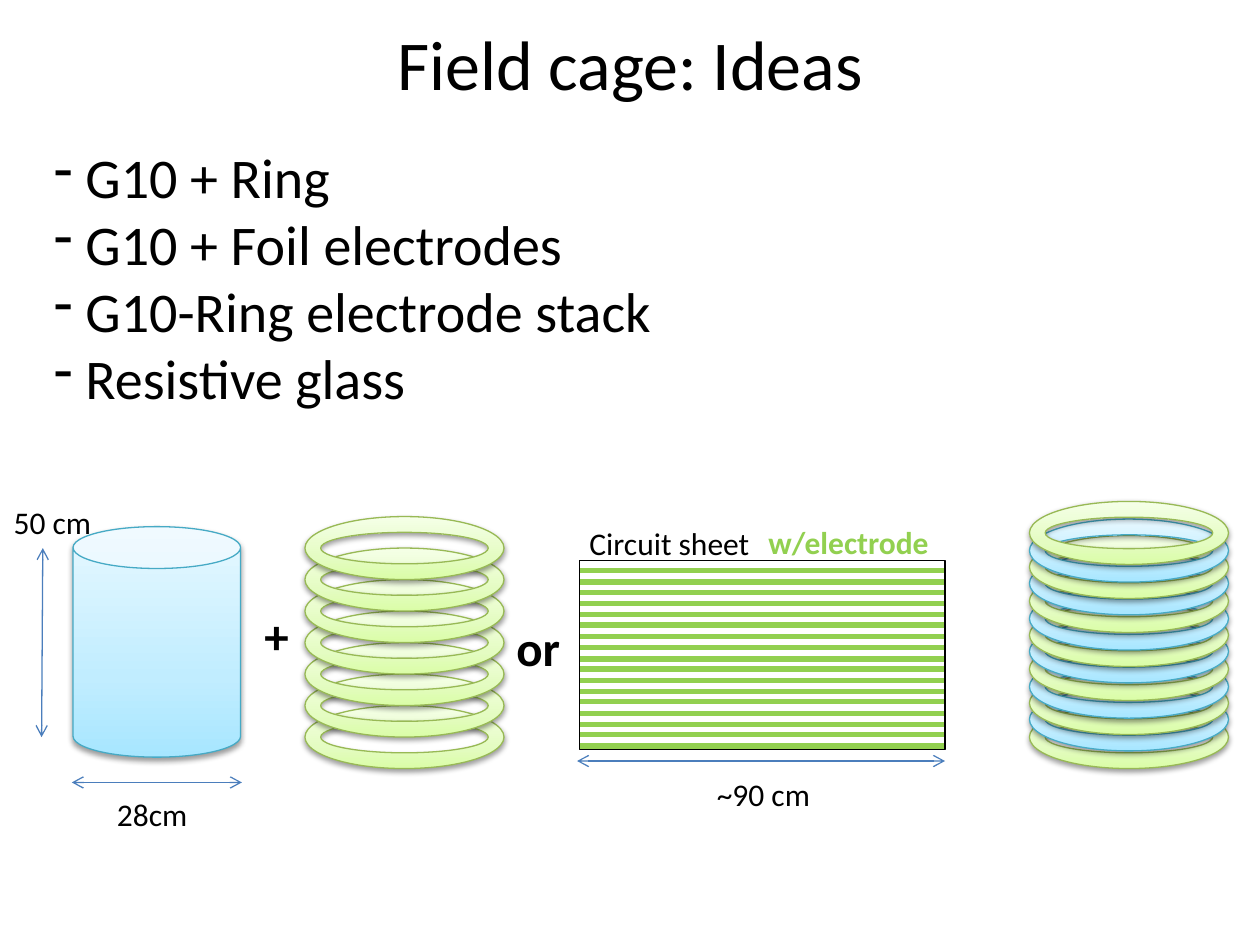
import pptx
import pptx.util
from lxml import etree
from pptx.dml.color import RGBColor
from pptx.enum.shapes import MSO_CONNECTOR, MSO_SHAPE
from pptx.enum.text import MSO_ANCHOR, MSO_AUTO_SIZE, PP_ALIGN
from pptx.oxml import parse_xml
from pptx.oxml.ns import nsdecls, qn

PX = 9144  # 100 px to the inch
BLACK = RGBColor(0x00, 0x00, 0x00)
ELECTRODE = RGBColor(0x92, 0xD0, 0x50)
ARROW = RGBColor(0x4B, 0x7E, 0xBC)
# Outline, then the gradient colours from bottom to top
GREEN = [RGBColor.from_string(c) for c in ("98B955", "DAFDA7", "E4FCC2", "F5FFE7")]
BLUE = [RGBColor.from_string(c) for c in ("46AAC5", "A7E6FF", "C1EDFF", "E7F8FF")]

deck = pptx.Presentation()
deck.slide_width, deck.slide_height = 1000 * PX, 750 * PX
slide = deck.slides.add_slide(deck.slide_layouts[6])


def add_solid(preset, left, top, width, height, palette):
    """Add a shape with a vertical three-stop gradient and a soft shadow."""
    solid = slide.shapes.add_shape(preset, left * PX, top * PX, width * PX, height * PX)
    outline, *colours = palette
    solid.line.color.rgb = outline
    solid.line.width = pptx.util.Pt(0.75)
    stops = "".join(
        f'<a:gs pos="{pos}"><a:srgbClr val="{colour}"/></a:gs>'
        for pos, colour in zip((0, 35000, 100000), colours))
    line = solid.line._get_or_add_ln()
    line.addprevious(parse_xml(
        f'<a:gradFill {nsdecls("a")} rotWithShape="1"><a:gsLst>{stops}</a:gsLst>'
        '<a:lin ang="16200000" scaled="0"/></a:gradFill>'))
    line.addnext(parse_xml(
        f'<a:effectLst {nsdecls("a")}><a:outerShdw blurRad="40000" dist="20000" '
        'dir="5400000" rotWithShape="0"><a:srgbClr val="000000">'
        '<a:alpha val="38000"/></a:srgbClr></a:outerShdw></a:effectLst>'))


def add_line(x1, y1, x2, y2, colour, weight, arrows=False):
    line = slide.shapes.add_connector(
        MSO_CONNECTOR.STRAIGHT, x1 * PX, y1 * PX, x2 * PX, y2 * PX)
    line.line.color.rgb = colour
    line.line.width = pptx.util.Pt(weight)
    etree.SubElement(line._element.spPr, qn("a:effectLst"))
    if arrows:
        for end in ("a:headEnd", "a:tailEnd"):
            etree.SubElement(line.line._get_or_add_ln(), qn(end), type="arrow")


# Title
title = slide.shapes.add_textbox(0, 0, 1000 * PX, 100 * PX).text_frame
title.word_wrap = True
title.vertical_anchor = MSO_ANCHOR.MIDDLE
heading = title.paragraphs[0]
heading.text = "Field cage: Ideas"
heading.alignment = PP_ALIGN.CENTER
heading.font.name = "Calibri"
heading.font.size = pptx.util.Pt(40)
heading.font.color.rgb = BLACK

# List of ideas
ideas = slide.shapes.add_textbox(33 * PX, 108 * PX, 558 * PX, 226 * PX).text_frame
ideas.word_wrap = True
ideas.auto_size = MSO_AUTO_SIZE.SHAPE_TO_FIT_TEXT
ideas.text = "G10 + Ring\nG10 + Foil electrodes\nG10-Ring electrode stack\nResistive glass"
for idea in ideas.paragraphs:
    properties = idea._p.get_or_add_pPr()
    properties.set("marL", str(25 * PX))
    properties.set("indent", str(-25 * PX))
    etree.SubElement(properties, qn("a:buFontTx"))
    etree.SubElement(properties, qn("a:buChar"), char="-")
    idea.font.name = "Calibri"
    idea.font.size = pptx.util.Pt(32)
    idea.font.color.rgb = BLACK

# G10 cylinder and its rings
add_solid(MSO_SHAPE.CAN, 58, 418, 133, 183, BLUE)
for ring in range(7):
    add_solid(MSO_SHAPE.DONUT, 242, 560 - 25 * ring, 158, 50, GREEN)

# Circuit sheet with 17 evenly spaced electrodes
for electrode in range(17):
    y = 453 + round(139 * electrode / 16)
    add_line(460, y, 750, y, ELECTRODE, 3)
sheet = slide.shapes.add_shape(MSO_SHAPE.RECTANGLE, 460 * PX, 445 * PX, 290 * PX, 150 * PX)
sheet.shadow.inherit = False
sheet.fill.background()
sheet.line.color.rgb = BLACK
sheet.line.width = pptx.util.Pt(0.75)

# Stack of alternating G10 and electrode rings
for ring in range(13):
    add_solid(MSO_SHAPE.DONUT, 817, round(560 - 13.5 * ring), 158, 50,
              BLUE if ring % 2 else GREEN)

# Dimension arrows
for ends in ((34, 435, 33, 585), (750, 604, 458, 604), (192, 621, 57, 621)):
    add_line(*ends, ARROW, 0.75, arrows=True)

# Labels
for text, left, top, width, height, size, bold, colour in (
    ("Circuit sheet", 458, 411, 149, 40, 18, False, BLACK),
    ("w/electrode", 600, 410, 148, 40, 18, True, ELECTRODE),
    ("50 cm", 1, 394, 82, 40, 18, False, BLACK),
    ("~90 cm", 559, 610, 95, 40, 18, False, BLACK),
    ("28cm", 83, 626, 77, 40, 18, False, BLACK),
    ("+", 200, 476, 40, 57, 28, True, BLACK),
    ("or", 400, 485, 58, 57, 28, True, BLACK),
):
    label = slide.shapes.add_textbox(left * PX, top * PX, width * PX, height * PX).text_frame
    label.word_wrap = False
    label.auto_size = MSO_AUTO_SIZE.SHAPE_TO_FIT_TEXT
    caption = label.paragraphs[0]
    caption.text = text
    caption.font.name = "Calibri"
    caption.font.size = pptx.util.Pt(size)
    caption.font.bold = bold
    caption.font.color.rgb = colour

deck.save("out.pptx")
